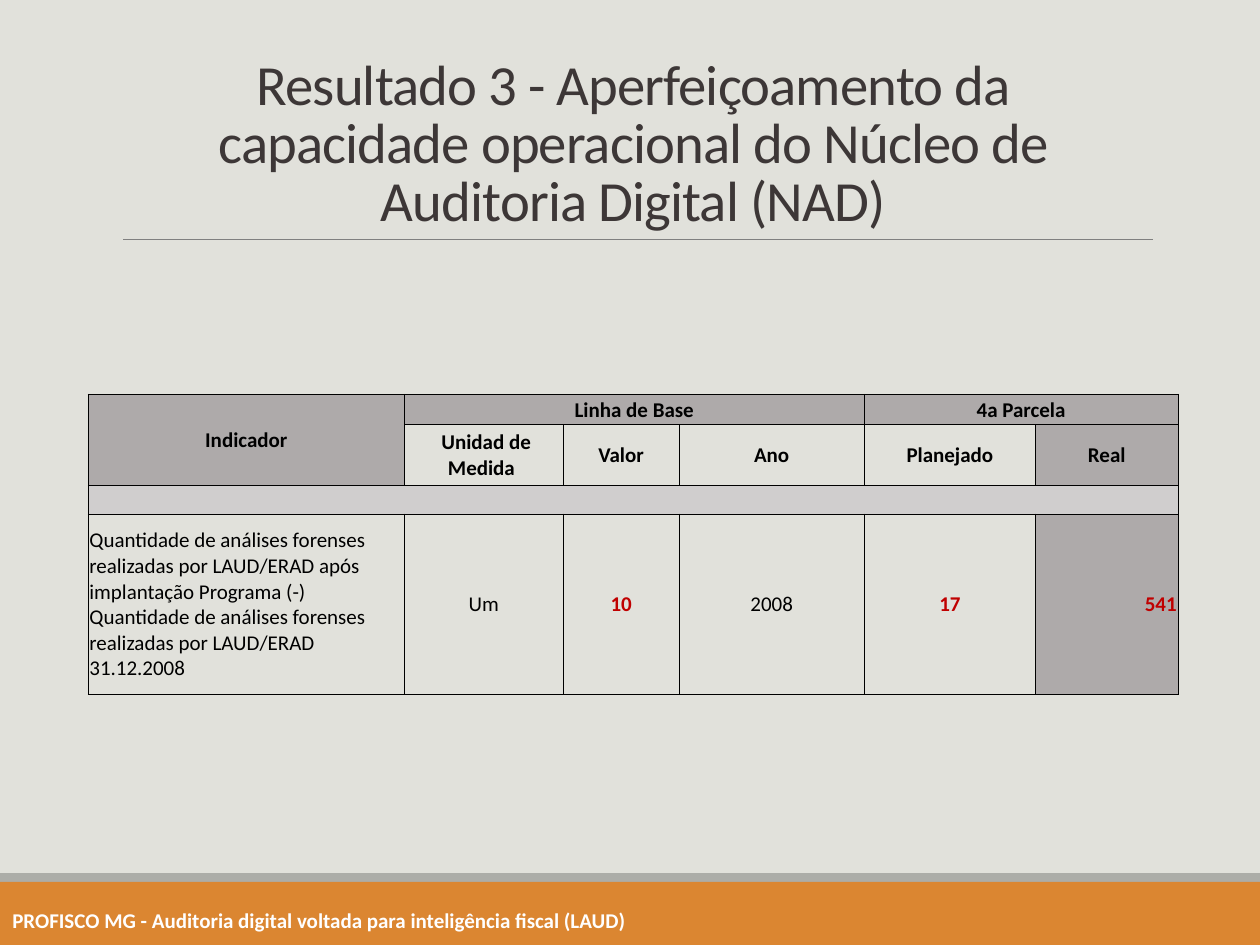
import pptx
import pptx.dml.color
import pptx.enum.shapes
import pptx.enum.text
import pptx.oxml.ns
import pptx.util
from lxml import etree

Inches = pptx.util.Inches
Pt = pptx.util.Pt
ALIGN = pptx.enum.text.PP_ALIGN
ANCHOR = pptx.enum.text.MSO_ANCHOR
qn = pptx.oxml.ns.qn

FONT = "Calibri"
COLORS = {
    "background": "E1E1DB", "strip": "ACADA8", "footer": "DB8631", "rule": "808080",
    "title": "3D3737", "text": "000000", "light": "FFFFFF", "accent": "C00000",
    "header": "AEAAAA", "spacer": "D0CECE",
}


def rgb(name):
    return pptx.dml.color.RGBColor.from_string(COLORS[name])


def add_run(paragraph, text, size, color, bold=False):
    run = paragraph.add_run()
    run.text = text
    run.font.name = FONT
    run.font.size = Pt(size)
    run.font.bold = bold
    run.font.color.rgb = rgb(color)
    return run


def add_band(slide, left, top, width, height, color):
    shape = slide.shapes.add_shape(
        pptx.enum.shapes.MSO_SHAPE.RECTANGLE,
        Inches(left), Inches(top), Inches(width), Inches(height))
    shape.shadow.inherit = False
    shape.fill.solid()
    shape.fill.fore_color.rgb = rgb(color)
    shape.line.fill.background()


def add_footer(slide, left, top, width, height):
    strip_height = 0.07
    add_band(slide, left, top, width, strip_height, "strip")
    add_band(slide, left, top + strip_height, width, height - strip_height, "footer")
    box = slide.shapes.add_textbox(
        Inches(left), Inches(top + 0.22), Inches(5.14), Inches(0.3))
    box.text_frame.word_wrap = False
    add_run(box.text_frame.paragraphs[0],
            "PROFISCO MG - Auditoria digital voltada para inteligência fiscal (LAUD)",
            12, "light", bold=True)


def add_title(slide, left, top, width, height):
    # Rule under the title
    bottom = Inches(top + height)
    rule = slide.shapes.add_connector(
        pptx.enum.shapes.MSO_CONNECTOR.STRAIGHT,
        Inches(left + 0.08), bottom, Inches(left + width), bottom)
    rule.line.color.rgb = rgb("rule")
    rule.line.width = Pt(0.5)
    etree.SubElement(rule._element.spPr, qn("a:effectLst"))

    # Title text
    box = slide.shapes.add_textbox(
        Inches(left), Inches(top), Inches(width), Inches(height))
    frame = box.text_frame
    frame.word_wrap = True
    frame.vertical_anchor = ANCHOR.BOTTOM
    paragraph = frame.paragraphs[0]
    paragraph.alignment = ALIGN.CENTER
    paragraph.line_spacing = 0.85
    run = add_run(paragraph,
                  "Resultado 3 - Aperfeiçoamento da capacidade operacional "
                  "do Núcleo de Auditoria Digital (NAD)", 32.4, "title")
    run.font._element.set("spc", "-50")


def format_cell(cell, fill=None):
    cell.margin_left = cell.margin_right = cell.margin_top = Inches(0.01)
    cell.margin_bottom = 0
    cell.vertical_anchor = ANCHOR.MIDDLE
    # Borders come before the fill in the cell properties
    properties = cell._tc.get_or_add_tcPr()
    for side in ("a:lnL", "a:lnR", "a:lnT", "a:lnB"):
        line = etree.SubElement(properties, qn(side), w=str(Pt(0.5)))
        solid = etree.SubElement(line, qn("a:solidFill"))
        etree.SubElement(solid, qn("a:srgbClr"), val=COLORS["text"])
    if fill:
        cell.fill.solid()
        cell.fill.fore_color.rgb = rgb(fill)
    else:
        cell.fill.background()


def add_indicator_table(slide, left, top, width, height):
    columns = [2.51, 1.26, 0.92, 1.47, 1.36, 1.13]
    rows = [0.24, 0.48, 0.23, 1.43]
    table = slide.shapes.add_table(
        len(rows), len(columns),
        Inches(left), Inches(top), Inches(width), Inches(height)).table
    table.first_row = False
    table.horz_banding = False
    for column, size in zip(table.columns, columns):
        column.width = Inches(size)
    for row, size in zip(table.rows, rows):
        row.height = Inches(size)

    # Fills: heading row, "Indicador" and the "Real" column are grey
    last = len(columns) - 1
    for r in range(len(rows)):
        for c in range(len(columns)):
            grey = r == 0 or c == last or (r, c) == (1, 0)
            format_cell(table.cell(r, c), "spacer" if r == 2 else "header" if grey else None)
    for start, end in [((0, 0), (1, 0)), ((0, 1), (0, 3)), ((0, 4), (0, 5)), ((2, 0), (2, 5))]:
        table.cell(*start).merge(table.cell(*end))

    # Keep the empty spacer row thin
    for c in range(len(columns)):
        spacer = table.cell(2, c).text_frame.paragraphs[0]
        etree.SubElement(spacer._p, qn("a:endParaRPr"), sz="1200")

    description = ("Quantidade de análises forenses realizadas por LAUD/ERAD após "
                   "implantação Programa (-) Quantidade de análises forenses "
                   "realizadas por LAUD/ERAD 31.12.2008")
    texts = {
        0: ["Indicador", " Linha de Base ", None, None, "4a Parcela", None],
        1: [None, " Unidad de Medida ", "Valor", "Ano", "Planejado", "Real"],
        3: [description, "Um", "10", "2008", "17", "541"],
    }
    accent_columns = (2, 4, 5)
    data_alignment = {0: ALIGN.LEFT, last: ALIGN.RIGHT}
    for r, row_texts in texts.items():
        for c, text in enumerate(row_texts):
            if text is None:
                continue
            is_data = r == 3
            accent = is_data and c in accent_columns
            paragraph = table.cell(r, c).text_frame.paragraphs[0]
            paragraph.alignment = data_alignment.get(c, ALIGN.CENTER) if is_data else ALIGN.CENTER
            add_run(paragraph, text, 12, "accent" if accent else "text",
                    bold=accent or not is_data)


def main():
    presentation = pptx.Presentation()
    presentation.slide_width = Inches(10)
    presentation.slide_height = Inches(7.5)
    slide = presentation.slides.add_slide(presentation.slide_layouts[6])
    slide.background.fill.solid()
    slide.background.fill.fore_color.rgb = rgb("background")
    add_footer(slide, 0, 6.93, 10, 0.57)
    add_title(slide, 0.9, 0.31, 8.25, 1.59)
    add_indicator_table(slide, 0.7, 3.13, 8.65, 2.38)
    presentation.save("out.pptx")


if __name__ == "__main__":
    main()
